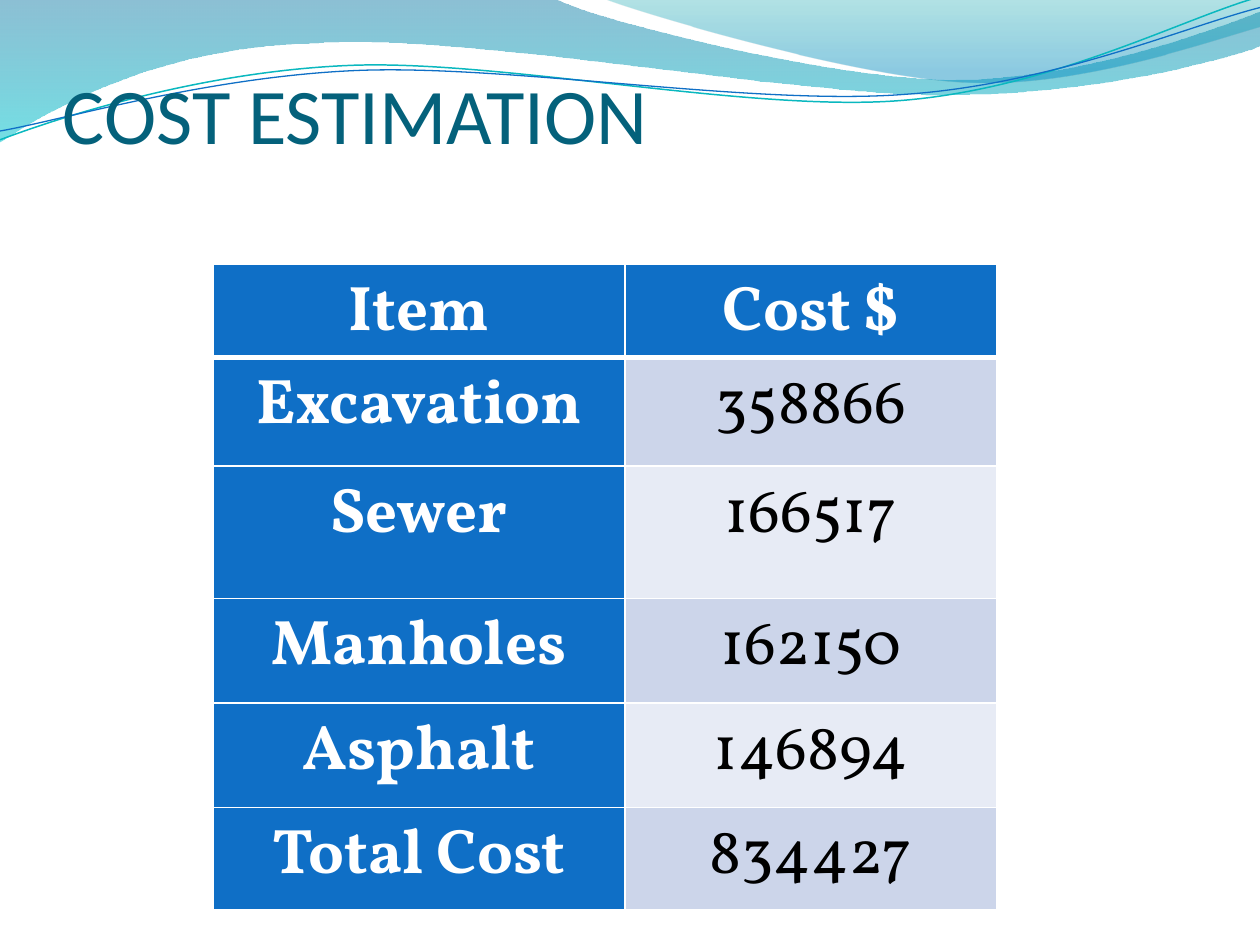
from lxml.etree import SubElement
from pptx import Presentation
from pptx.dml.color import RGBColor
from pptx.enum.text import MSO_ANCHOR as Anchor, PP_ALIGN as Align
from pptx.oxml.ns import qn
from pptx.util import Inches, Pt

COLS, ROWS = 100, 75
BLUE, WHITE, BLACK = "0F6FC6", "FFFFFF", "000000"
BANDS = ("CCD5EA", "E7EBF5")


def rgb(value):
    return RGBColor.from_string(value)


def write(tf, text, font, size, color, bold=False, align=Align.LEFT, spacing=1.0):
    p = tf.paragraphs[0]
    p.alignment, p.line_spacing = align, spacing
    r = p.add_run()
    r.text = text
    r.font.name, r.font.size, r.font.bold = font, Pt(size), bold
    r.font.color.rgb = rgb(color)


def bend(sp, segments):
    lines = iter(list(sp._element.iter(qn("a:lnTo"))))
    for seg in segments:
        group = [next(lines) for _ in seg]
        if len(seg) == 3:
            curve = SubElement(group[0].getparent(), qn("a:cubicBezTo"))
            group[0].addprevious(curve)
            for line in group:
                curve.append(line[0])
                line.getparent().remove(line)


class Deck:
    title_font, table_font = "Calibri", "Vollkorn"

    def __init__(self):
        self.prs = Presentation()
        self.prs.slide_width, self.prs.slide_height = Inches(10), Inches(7.5)
        self.s = self.prs.slides.add_slide(self.prs.slide_layouts[6])

    def x(self, cols):
        return round(self.prs.slide_width * cols / COLS)

    def y(self, rows):
        return round(self.prs.slide_height * rows / ROWS)

    def outline(self, start, segments, close):
        fb = self.s.shapes.build_freeform(self.x(start[0]), self.y(start[1]))
        fb.add_line_segments([(self.x(a), self.y(b)) for seg in segments for a, b in seg],
                             close=close)
        sp = fb.convert_to_shape()
        sp.shadow.inherit = False
        bend(sp, segments)
        return sp

    def wave(self, start, *segments, stops):
        sp = self.outline(start, segments, True)
        sp.line.fill.background()
        sp.fill.gradient()
        sp.fill.gradient_angle = 270
        for stop, (position, color, _) in zip(sp.fill.gradient_stops, stops):
            stop.position = position
            stop.color.rgb = rgb(color)
        clrs = sp._element.spPr.iter(qn("a:srgbClr"))
        for clr, (_, _, opacity) in zip(clrs, stops):
            SubElement(clr, qn("a:alpha")).set("val", str(opacity * 1000))

    def curve(self, start, *segments, color, width):
        sp = self.outline(start, segments, False)
        sp.fill.background()
        sp.line.color.rgb, sp.line.width = rgb(color), Pt(width)

    def title(self, text, left, top, width, height, gap):
        sp = self.s.shapes.add_textbox(self.x(left), self.y(top), self.x(width), self.y(height))
        tf = sp.text_frame
        tf.word_wrap, tf.vertical_anchor = True, Anchor.BOTTOM
        tf.margin_left = tf.margin_right = 0
        tf.margin_bottom = self.y(gap)
        write(tf, text, self.title_font, 45, "04617B")

    def border(self, cell, **widths):
        tcPr = cell._tc.get_or_add_tcPr()
        for side in "LRTB":
            ln = SubElement(tcPr, qn(f"a:ln{side}"), w=str(Pt(widths.get(side, 1))))
            SubElement(SubElement(ln, qn("a:solidFill")), qn("a:srgbClr"), val=WHITE)

    def cell(self, cell, text, row, col):
        header = row == 0
        label = header or col == 0
        cell.margin_left = cell.margin_right = Inches(0.07)
        cell.margin_top = cell.margin_bottom = 0
        self.border(cell, T=3 if row == 1 else 1, B=3 if header else 1)
        cell.fill.solid()
        cell.fill.fore_color.rgb = rgb(BLUE if label else BANDS[(row - 1) % 2])
        write(cell.text_frame, text, self.table_font, 36, WHITE if label else BLACK,
              bold=label, align=Align.CENTER, spacing=1.07)

    def table(self, data, left, top, widths, heights):
        tb = self.s.shapes.add_table(len(data), len(widths), self.x(left), self.y(top),
                                     self.x(sum(widths)), self.y(sum(heights))).table
        tb.horz_banding = False
        for column, w in zip(tb.columns, widths):
            column.width = self.x(w)
        for row, h in zip(tb.rows, heights):
            row.height = self.y(h)
        for i, values in enumerate(data):
            for j, text in enumerate(values):
                self.cell(tb.cell(i, j), text, i, j)


def main():
    d = Deck()
    d.wave((0, 0), [(44, -0.1)],
           [(47.6, 1.7), (66.4, 6.3), (75.8, 6.3)],
           [(85.3, 6.3), (95.8, 2.6), (100, 0.9)],
           [(100.1, 3.6)],
           [(98.3, 4.4), (87, 7.6), (74.6, 7.5)],
           [(62.2, 7.5), (38.2, 2.8), (25.7, 3.4)],
           [(12.9, 3.6), (4.6, 8.3), (-0.1, 11.3)],
           stops=[(0, "0074A1", 45), (1, "00C6CF", 55)])
    d.wave((47.9, -0.1),
           [(50.9, 1.1), (68.2, 6.2), (76.9, 6.5)],
           [(85.6, 6.9), (96.1, 3.2), (100, 2.1)],
           [(100, 0)],
           stops=[(0, "00A1A9", 30), (0.8, "008BBF", 45)])
    d.curve((0, 11.1),
            [(4.8, 9.3), (15.8, 5.7), (27.7, 5.2)],
            [(39.5, 4.7), (59.3, 8.9), (71.3, 8)],
            [(83.3, 7.1), (93.8, 1.5), (99.8, -0.2)], color="0AB8BF", width=0.85)
    d.curve((0, 10.4),
            [(4.7, 9.6), (16.4, 6.1), (28.3, 5.6)],
            [(40.3, 5.1), (59.7, 8.4), (71.7, 7.5)],
            [(83.6, 6.7), (94.1, 2.1), (100, 0.6)], color=BLUE, width=0.75)
    d.title("COST ESTIMATION", 5, 7.7, 90, 12.5, gap=7.5)
    d.table([("Item", "Cost $"),
             ("Excavation", "358866"),
             ("Sewer", "166517"),
             ("Manholes", "162150"),
             ("Asphalt", "146894"),
             ("Total Cost", "834427")],
            16.9, 21, (32.7, 29.5), (7.4, 8.6, 10.5, 8.3, 8.3, 8.1))
    d.prs.save("out.pptx")


if __name__ == "__main__":
    main()
